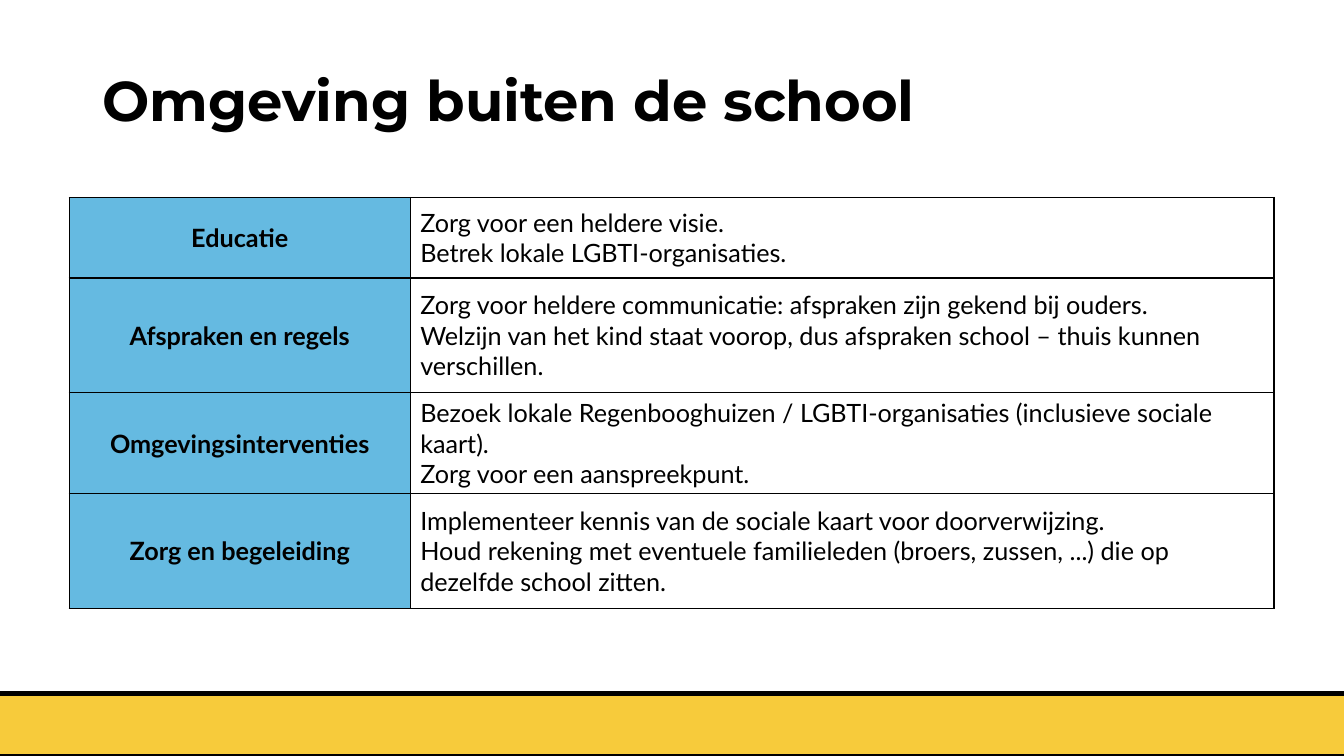
from dataclasses import dataclass

from lxml.etree import SubElement
from pptx import Presentation
from pptx.dml.color import RGBColor
from pptx.enum.shapes import MSO_SHAPE as Shape
from pptx.enum.text import MSO_ANCHOR as Anchor, PP_ALIGN as Align
from pptx.oxml.ns import qn
from pptx.util import Pt


@dataclass(frozen=True)
class Theme:
    black: str = "000000"
    blue: str = "65BAE1"
    yellow: str = "F7CB3B"
    heading_font: str = "Montserrat"
    body_font: str = "Lato"
    title_size: int = 40
    table_size: int = 18
    border: int = 1
    band_line: int = 3


THEME = Theme()

TITLE = "Omgeving buiten de school"
ADVICE = [
    ("Educatie", 57.6, [
        "Zorg voor een heldere visie.",
        "Betrek lokale LGBTI-organisaties.",
    ]),
    ("Afspraken en regels", 82, [
        "Zorg voor heldere communicatie: afspraken zijn gekend bij ouders.",
        "Welzijn van het kind staat voorop, dus afspraken school – thuis kunnen verschillen.",
    ]),
    ("Omgevingsinterventies", 72, [
        "Bezoek lokale Regenbooghuizen / LGBTI-organisaties (inclusieve sociale kaart).",
        "Zorg voor een aanspreekpunt.",
    ]),
    ("Zorg en begeleiding", 82, [
        "Implementeer kennis van de sociale kaart voor doorverwijzing.",
        "Houd rekening met eventuele familieleden (broers, zussen, ...) die op dezelfde school zitten.",
    ]),
]


def color(value):
    return RGBColor.from_string(value)


def format_text(frame, font, size, bold, align):
    frame.vertical_anchor = Anchor.MIDDLE
    for para in frame.paragraphs:
        para.alignment = align
        for span in para.runs:
            span.font.name = font
            span.font.size = Pt(size)
            span.font.bold = bold
            span.font.color.rgb = color(THEME.black)


def add_band(page):
    band = page.shapes.add_shape(Shape.RECTANGLE, Pt(-26.6), Pt(495.4), Pt(1013), Pt(44.6))
    band.shadow.inherit = False
    band.fill.solid()
    band.fill.fore_color.rgb = color(THEME.yellow)
    band.line.color.rgb = color(THEME.black)
    band.line.width = Pt(THEME.band_line)


def set_title(page):
    title = page.shapes.title
    title.left, title.top, title.width, title.height = Pt(66), Pt(28.8), Pt(828), Pt(90)
    title.text_frame.text = TITLE
    title.text_frame.paragraphs[0].line_spacing = 0.9
    format_text(title.text_frame, THEME.heading_font, THEME.title_size, True, Align.LEFT)


def add_borders(cell):
    properties = cell._tc.get_or_add_tcPr()
    for side in ("lnL", "lnR", "lnT", "lnB"):
        line = SubElement(properties, qn(f"a:{side}"), w=str(Pt(THEME.border)))
        fill = SubElement(line, qn("a:solidFill"))
        SubElement(fill, qn("a:srgbClr"), val=THEME.black)


def fill_cell(cell, text, bold, align, fill=None):
    cell.text_frame.text = text
    format_text(cell.text_frame, THEME.body_font, THEME.table_size, bold, align)
    cell.vertical_anchor = Anchor.MIDDLE
    add_borders(cell)
    if fill:
        cell.fill.solid()
        cell.fill.fore_color.rgb = color(fill)
    else:
        cell.fill.background()


def add_advice_table(page):
    height = sum(row_height for _, row_height, _ in ADVICE)
    frame = page.shapes.add_table(len(ADVICE), 2, Pt(49.5), Pt(141), Pt(860.5), Pt(height))
    table = frame.table
    table.first_row = False
    table.horz_banding = False
    table.columns[0].width = Pt(243.5)
    table.columns[1].width = Pt(617)
    for index, (topic, row_height, tips) in enumerate(ADVICE):
        table.rows[index].height = Pt(row_height)
        fill_cell(table.cell(index, 0), topic, True, Align.CENTER, THEME.blue)
        fill_cell(table.cell(index, 1), "\n".join(tips), False, Align.LEFT)


def main():
    deck = Presentation()
    deck.slide_width, deck.slide_height = Pt(960), Pt(540)
    page = deck.slides.add_slide(deck.slide_layouts[5])
    add_band(page)
    set_title(page)
    add_advice_table(page)
    deck.save("out.pptx")


if __name__ == "__main__":
    main()
